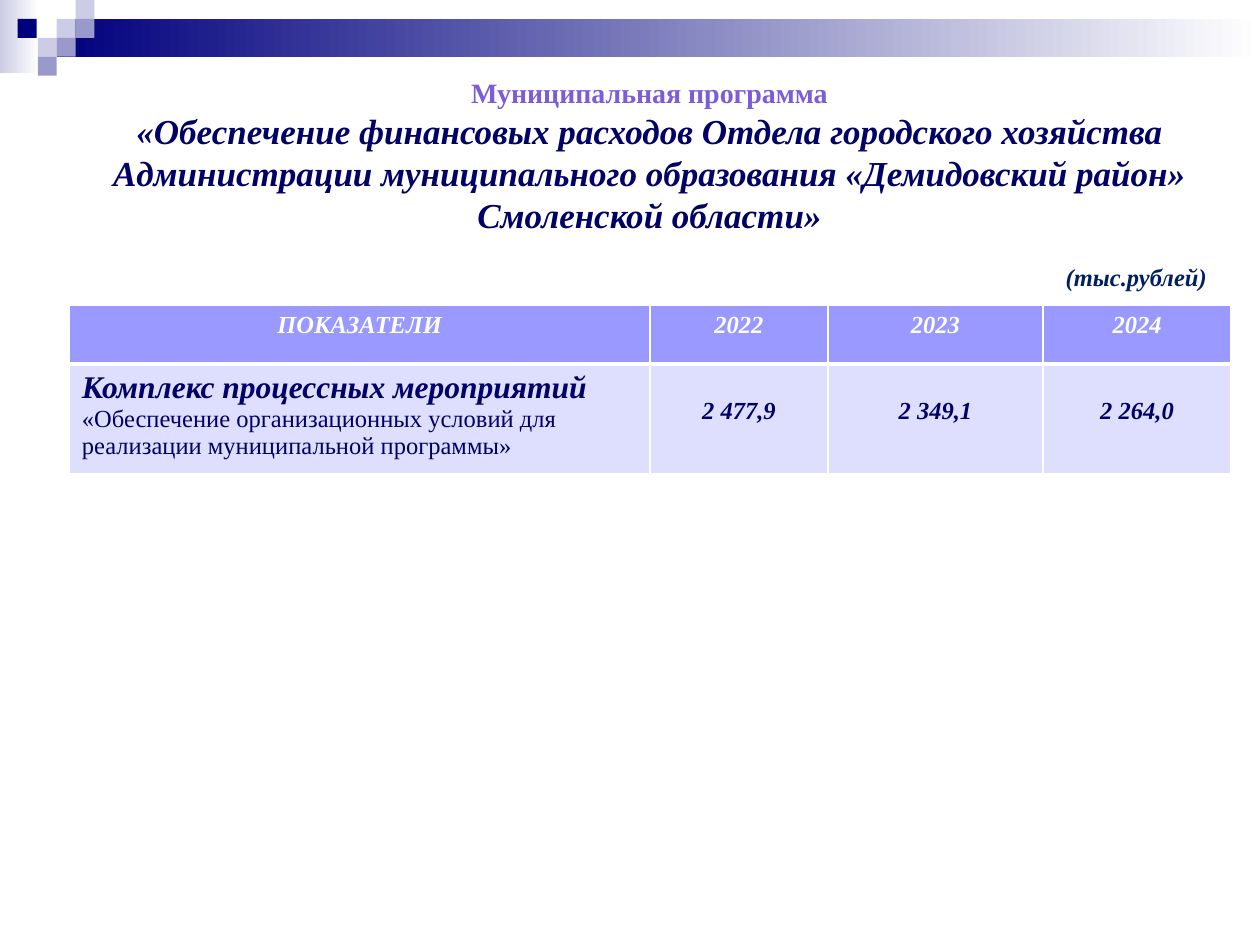
import dataclasses
import typing

import lxml.etree
import pptx
import pptx.dml.color
import pptx.enum.shapes
import pptx.enum.text
import pptx.oxml.ns
import pptx.util

Inches = pptx.util.Inches
Align = pptx.enum.text.PP_ALIGN


@dataclasses.dataclass(frozen=True)
class Theme:
    font: str = "Times New Roman"
    navy: str = "00007D"
    lavender: str = "CCCCE6"
    violet: str = "9999CC"
    white: str = "FFFFFF"
    kicker: str = "7D5CDA"
    ink: str = "000066"
    unit: str = "002060"
    header_fill: str = "9999FF"
    body_fill: str = "DEDEFF"
    kicker_size: float = 16
    title_size: float = 20
    measure_size: float = 18
    body_size: float = 14
    thin_border: float = 1
    thick_border: float = 3


THEME = Theme()


class Square(typing.NamedTuple):
    left: float
    top: float
    color: str


class Style(typing.NamedTuple):
    size: float
    color: str
    bold: bool = True
    italic: bool = True


class Piece(typing.NamedTuple):
    text: str
    style: Style


SQUARE_SIDE = 0.15
SQUARES = [
    Square(0.45, 0.15, THEME.lavender),
    Square(0.6, 0, THEME.lavender),
    Square(0.6, 0.15, THEME.violet),
    Square(0.3, 0.3, THEME.lavender),
    Square(0.14, 0.15, THEME.navy),
    Square(0.45, 0.3, THEME.violet),
    Square(0.3, 0.45, THEME.violet),
]

HEADINGS = ["ПОКАЗАТЕЛИ", "2022", "2023", "2024"]
AMOUNTS = ["2 477,9", "2 349,1", "2 264,0"]
COLUMN_WIDTHS = [4.61, 1.41, 1.71, 1.49]
ROW_HEIGHTS = [0.47, 0.86]

HEADING_STYLE = Style(THEME.body_size, THEME.white)
AMOUNT_STYLE = Style(THEME.body_size, THEME.ink)
MEASURE = [
    Piece("Комплекс процессных мероприятий ", Style(THEME.measure_size, THEME.ink)),
    Piece("«Обеспечение организационных условий для реализации муниципальной программы»",
          Style(THEME.body_size, THEME.ink, bold=False, italic=False)),
]
TITLE = [
    Piece("Муниципальная программа", Style(THEME.kicker_size, THEME.kicker, italic=False)),
    Piece("«Обеспечение финансовых расходов Отдела городского хозяйства Администрации "
          "муниципального образования «Демидовский район» Смоленской области»",
          Style(THEME.title_size, THEME.ink)),
]
UNIT = Piece("(тыс.рублей)", Style(THEME.body_size, THEME.unit))


def rgb(color: str) -> pptx.dml.color.RGBColor:
    return pptx.dml.color.RGBColor.from_string(color)


def add_rectangle(slide, left: float, top: float, width: float, height: float,
                  color: str, fade_to: typing.Optional[str] = None) -> None:
    """Draw a borderless rectangle, fading left to right when fade_to is given."""
    rectangle = slide.shapes.add_shape(
        pptx.enum.shapes.MSO_SHAPE.RECTANGLE,
        Inches(left), Inches(top), Inches(width), Inches(height))
    rectangle.shadow.inherit = False
    rectangle.line.fill.background()
    if fade_to is None:
        rectangle.fill.solid()
        rectangle.fill.fore_color.rgb = rgb(color)
    else:
        rectangle.fill.gradient()
        rectangle.fill.gradient_angle = 0
        for stop, stop_color in zip(rectangle.fill.gradient_stops, (color, fade_to)):
            stop.color.rgb = rgb(stop_color)


def write_paragraph(paragraph, pieces: list[Piece], alignment: Align) -> None:
    paragraph.alignment = alignment
    for piece in pieces:
        run = paragraph.add_run()
        run.text = piece.text
        run.font.name = THEME.font
        run.font.size = pptx.util.Pt(piece.style.size)
        run.font.bold = piece.style.bold
        run.font.italic = piece.style.italic
        run.font.color.rgb = rgb(piece.style.color)


def add_text(slide, left: float, top: float, width: float, height: float,
             lines: list[Piece], alignment: Align, wrap: bool) -> None:
    frame = slide.shapes.add_textbox(
        Inches(left), Inches(top), Inches(width), Inches(height)).text_frame
    frame.word_wrap = wrap
    frame.auto_size = pptx.enum.text.MSO_AUTO_SIZE.SHAPE_TO_FIT_TEXT
    for index, line in enumerate(lines):
        paragraph = frame.add_paragraph() if index else frame.paragraphs[0]
        write_paragraph(paragraph, [line], alignment)


def set_borders(cell, top: float, bottom: float) -> None:
    """Insert white cell borders ahead of the fill, as the schema requires."""
    properties = cell._tc.get_or_add_tcPr()
    widths = {"lnL": THEME.thin_border, "lnR": THEME.thin_border, "lnT": top, "lnB": bottom}
    for position, (side, width) in enumerate(widths.items()):
        line = lxml.etree.Element(pptx.oxml.ns.qn(f"a:{side}"), w=str(pptx.util.Pt(width)))
        fill = lxml.etree.SubElement(line, pptx.oxml.ns.qn("a:solidFill"))
        lxml.etree.SubElement(fill, pptx.oxml.ns.qn("a:srgbClr"), val=THEME.white)
        properties.insert(position, line)


def fill_cell(cell, pieces: list[Piece], alignment: Align, color: str,
              top_border: float, bottom_border: float) -> None:
    cell.fill.solid()
    cell.fill.fore_color.rgb = rgb(color)
    set_borders(cell, top_border, bottom_border)
    write_paragraph(cell.text_frame.paragraphs[0], pieces, alignment)


def add_budget_table(slide) -> None:
    table = slide.shapes.add_table(
        len(ROW_HEIGHTS), len(COLUMN_WIDTHS), Inches(0.55), Inches(2.42),
        Inches(sum(COLUMN_WIDTHS)), Inches(sum(ROW_HEIGHTS))).table
    table.horz_banding = False
    for column, width in zip(table.columns, COLUMN_WIDTHS):
        column.width = Inches(width)
    for row, height in zip(table.rows, ROW_HEIGHTS):
        row.height = Inches(height)

    for index, heading in enumerate(HEADINGS):
        fill_cell(table.cell(0, index), [Piece(heading, HEADING_STYLE)], Align.CENTER,
                  THEME.header_fill, THEME.thin_border, THEME.thick_border)
    fill_cell(table.cell(1, 0), MEASURE, Align.LEFT,
              THEME.body_fill, THEME.thick_border, THEME.thin_border)
    for index, amount in enumerate(AMOUNTS, start=1):
        cell = table.cell(1, index)
        fill_cell(cell, [Piece(amount, AMOUNT_STYLE)], Align.CENTER,
                  THEME.body_fill, THEME.thick_border, THEME.thin_border)
        cell.margin_top = Inches(0.27)


def main() -> None:
    presentation = pptx.Presentation()
    presentation.slide_width = Inches(10)
    presentation.slide_height = Inches(7.5)
    slide = presentation.slides.add_slide(presentation.slide_layouts[6])

    add_rectangle(slide, 0, 0, 0.31, 0.58, THEME.lavender, fade_to=THEME.white)
    add_rectangle(slide, 0.45, 0.15, 9.55, 0.3, THEME.navy, fade_to=THEME.white)
    for square in SQUARES:
        add_rectangle(slide, square.left, square.top, SQUARE_SIDE, SQUARE_SIDE, square.color)

    add_text(slide, 0.31, 0.55, 9.69, 1.38, TITLE, Align.CENTER, wrap=True)
    add_budget_table(slide)
    add_text(slide, 8.36, 2.03, 1.33, 0.34, [UNIT], Align.LEFT, wrap=False)
    presentation.save("out.pptx")


if __name__ == "__main__":
    main()
